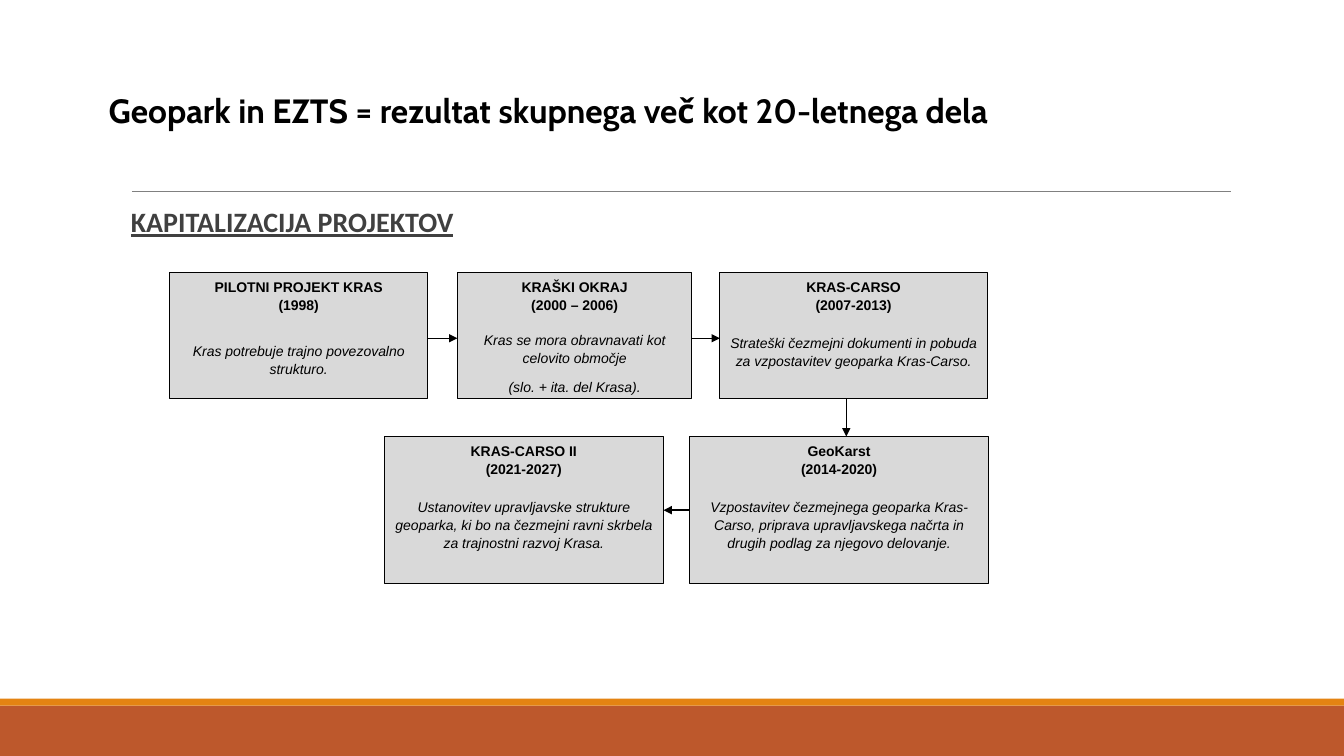
from lxml import etree
from pptx import Presentation
from pptx.dml.color import RGBColor
from pptx.enum.shapes import MSO_CONNECTOR, MSO_SHAPE
from pptx.enum.text import MSO_ANCHOR, PP_ALIGN
from pptx.oxml.ns import qn
from pptx.util import Pt

RECTANGLE = MSO_SHAPE.RECTANGLE
STRAIGHT = MSO_CONNECTOR.STRAIGHT
TOP = MSO_ANCHOR.TOP
LEFT, CENTER = PP_ALIGN.LEFT, PP_ALIGN.CENTER

# Content
SLIDE_WIDTH, SLIDE_HEIGHT = 960, 540
TITLE = "Geopark in EZTS = rezultat skupnega več kot 20-letnega dela"
HEADING = "KAPITALIZACIJA PROJEKTOV"

# Rows of the flow: top, height, height of the arrows
ROWS = {
    "upper": (194.4, 90, 241.6),
    "lower": (311.8, 105.2, 364.4),
}
# Projects in order of the flow: row, left, width, name, years, gap, description
PROJECTS = [
    ("upper", 121, 184.7, "PILOTNI PROJEKT KRAS", "(1998)", 20.3,
     ["Kras potrebuje trajno povezovalno strukturo."]),
    ("upper", 326.7, 167.5, "KRAŠKI OKRAJ", "(2000 – 2006)", 12.3,
     ["Kras se mora obravnavati kot celovito območje", "(slo. + ita. del Krasa)."]),
    ("upper", 514.2, 191, "KRAS-CARSO", "(2007-2013)", 14.2,
     ["Strateški čezmejni dokumenti in pobuda za vzpostavitev geoparka Kras-Carso."]),
    ("lower", 492.3, 214, "GeoKarst", "(2014-2020)", 14.2,
     ["Vzpostavitev čezmejnega geoparka Kras-Carso, priprava upravljavskega "
      "načrta in drugih podlag za njegovo delovanje."]),
    ("lower", 274.4, 199.5, "KRAS-CARSO II", "(2021-2027)", 14.2,
     ["Ustanovitev upravljavske strukture geoparka, ki bo na čezmejni ravni "
      "skrbela za trajnostni razvoj Krasa."]),
]

# Formats
TITLE_FONT = {"name": "Cabin", "size": Pt(24), "bold": True}
HEADING_FONT = {"name": "Calibri", "size": Pt(20), "bold": True, "underline": True}
NAME_FONT = {"name": "Arial", "size": Pt(10), "bold": True}
DESCRIPTION_FONT = {"name": "Arial", "size": Pt(10), "italic": True}


def color(hex_string):
    return RGBColor.from_string(hex_string)


def add_box(left, top, width, height, fill, line=None):
    shape = slide.shapes.add_shape(RECTANGLE, Pt(left), Pt(top), Pt(width), Pt(height))
    shape.shadow.inherit = False
    shape.fill.solid()
    shape.fill.fore_color.rgb = color(fill)
    if line:
        shape.line.color.rgb = color(line)
        shape.line.width = Pt(0.75)
    else:
        shape.line.fill.background()
    return shape


def add_line(start, end, hex_string, width, arrow=False):
    connector = slide.shapes.add_connector(STRAIGHT, *map(Pt, start + end))
    connector.line.color.rgb = color(hex_string)
    connector.line.width = Pt(width)
    if arrow:
        line = connector.line._get_or_add_ln()
        etree.SubElement(line, qn("a:tailEnd"), type="triangle")
    etree.SubElement(connector._element.spPr, qn("a:effectLst"))


def write(paragraph, text, font, hex_string, **layout):
    run = paragraph.add_run()
    run.text = text
    for name, value in font.items():
        setattr(run.font, name, value)
    run.font.color.rgb = color(hex_string)
    for name, value in layout.items():
        setattr(paragraph, name, value)


def add_text(left, top, width, height, text, font, hex_string, **layout):
    frame = slide.shapes.add_textbox(Pt(left), Pt(top), Pt(width), Pt(height)).text_frame
    frame.word_wrap = True
    write(frame.paragraphs[0], text, font, hex_string, alignment=LEFT, **layout)


def add_project(row, left, width, name, years, gap, description):
    top, height, _ = ROWS[row]
    frame = add_box(left, top, width, height, "D9D9D9", "000000").text_frame
    frame.word_wrap = True
    frame.vertical_anchor = TOP
    lines = [(name, NAME_FONT, 0), (years, NAME_FONT, gap)]
    lines += [(text, DESCRIPTION_FONT, 8) for text in description]
    for index, (text, font, space) in enumerate(lines):
        paragraph = frame.add_paragraph() if index else frame.paragraphs[0]
        write(paragraph, text, font, "000000", alignment=CENTER,
              line_spacing=1.07, space_after=Pt(space))


def connect(source, target):
    row, left, width = source[:3]
    next_row, next_left, next_width = target[:3]
    top, height, level = ROWS[row]
    if row != next_row:
        # Downward arrow halfway between the two box centres
        x = (left + width / 2 + next_left + next_width / 2) / 2
        start, end = (x, top + height), (x, ROWS[next_row][0])
    elif next_left > left:
        start, end = (left + width, level), (next_left, level)
    else:
        start, end = (left, level), (next_left + next_width, level)
    add_line(start, end, "000000", 1, arrow=True)


presentation = Presentation()
presentation.slide_width, presentation.slide_height = Pt(SLIDE_WIDTH), Pt(SLIDE_HEIGHT)
slide = presentation.slides.add_slide(presentation.slide_layouts[6])

# Footer bands and rule under the title
add_box(0, 504, SLIDE_WIDTH, 36, "BD582C")
add_box(0, 499, SLIDE_WIDTH, 5, "E48312")
add_line((94.3, 136.6), (879, 136.6), "808080", 0.5)

# Title and heading
add_text(70.6, 60.5, 825, 36, TITLE, TITLE_FONT, "000000")
add_text(86.4, 145.4, 792, 32, HEADING, HEADING_FONT, "404040", line_spacing=0.9)

# Project flow
for project in PROJECTS:
    add_project(*project)
for source, target in zip(PROJECTS, PROJECTS[1:]):
    connect(source, target)

presentation.save("out.pptx")
